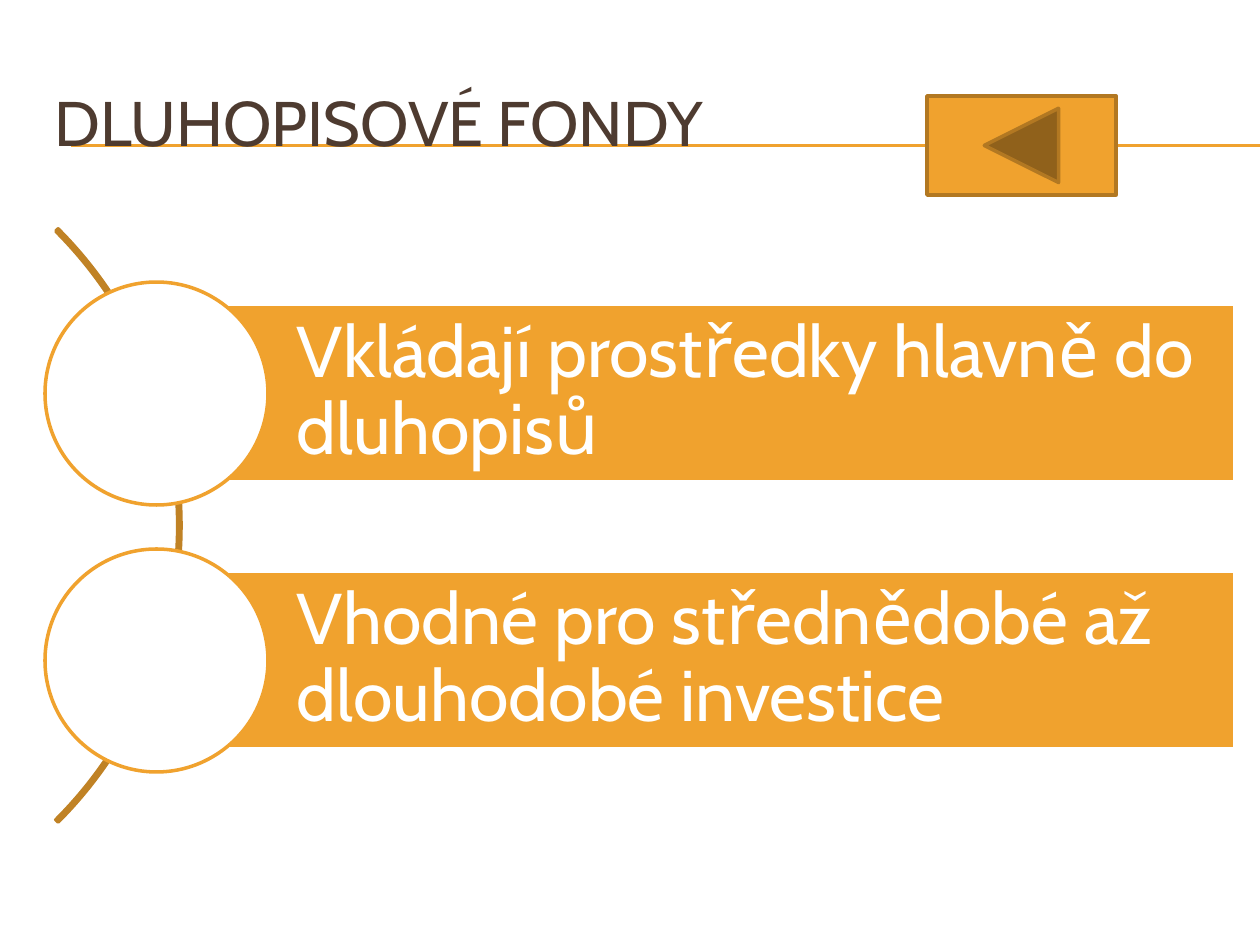
import dataclasses

import pptx
import pptx.dml.color
import pptx.enum.shapes
import pptx.enum.text
import pptx.oxml
import pptx.oxml.ns
import pptx.util

SHAPE = pptx.enum.shapes.MSO_SHAPE
ANCHOR = pptx.enum.text.MSO_ANCHOR
ALIGN = pptx.enum.text.PP_ALIGN
EMU_PER_PX = 914400 / 126


@dataclasses.dataclass(frozen=True)
class Theme:
    font: str = "Cabin"
    title_size: int = 36
    body_size: int = 41
    accent: str = "F0A22E"
    arc: str = "C08225"
    button_line: str = "B27822"
    title: str = "4E3B30"
    white: str = "FFFFFF"
    rule_width: float = 0.75
    outline_width: float = 2


@dataclasses.dataclass(frozen=True)
class Box:
    left: int
    top: int
    width: int
    height: int


@dataclasses.dataclass(frozen=True)
class Item:
    text: str
    center: int


THEME = Theme()
BAR_LEFT, BAR_WIDTH, BAR_HEIGHT = 156, 1079, 178
CIRCLE = 223
FIRST_CENTER, PITCH = 393, 267
TEXTS = (
    "Vkládají prostředky hlavně do dluhopisů",
    "Vhodné pro střednědobé až dlouhodobé investice",
)
ITEMS = [Item(text, FIRST_CENTER + index * PITCH) for index, text in enumerate(TEXTS)]


def px(length: int) -> pptx.util.Emu:
    return pptx.util.Emu(round(length * EMU_PER_PX))


def rgb(color: str) -> pptx.dml.color.RGBColor:
    return pptx.dml.color.RGBColor.from_string(color)


def apply_format(target, values: dict) -> None:
    for name, value in values.items():
        setattr(target, name, value)


def place(shape, box: Box) -> None:
    apply_format(shape, {name: px(value) for name, value in dataclasses.asdict(box).items()})


def write_text(shape, text: str, size: int, color: str, frame_format: dict, paragraph_format: dict) -> None:
    frame = shape.text_frame
    frame.text = text
    apply_format(frame, {"word_wrap": True, "vertical_anchor": ANCHOR.MIDDLE, **frame_format})
    paragraph = frame.paragraphs[0]
    apply_format(paragraph, {"alignment": ALIGN.LEFT, **paragraph_format})
    font = paragraph.runs[0].font
    apply_format(font, {"name": THEME.font, "size": pptx.util.Pt(size), "bold": False})
    font.color.rgb = rgb(color)


def add_shape(slide, kind, box: Box, fill: str, line: str):
    shape = slide.shapes.add_shape(kind, *map(px, dataclasses.astuple(box)))
    shape.shadow.inherit = False
    shape.fill.solid()
    shape.fill.fore_color.rgb = rgb(fill)
    shape.line.color.rgb = rgb(line)
    shape.line.width = pptx.util.Pt(THEME.outline_width)
    return shape


def add_rule(slide, top: int) -> None:
    connector = slide.shapes.add_connector(
        pptx.enum.shapes.MSO_CONNECTOR.STRAIGHT, px(71), px(top), px(1260), px(top)
    )
    connector.line.color.rgb = rgb(THEME.accent)
    connector.line.width = pptx.util.Pt(THEME.rule_width)
    properties = connector.element.find(pptx.oxml.ns.qn("p:spPr"))
    properties.append(pptx.oxml.parse_xml(f"<a:effectLst {pptx.oxml.ns.nsdecls('a')}/>"))


def add_title(slide) -> None:
    title = slide.shapes.title
    place(title, Box(42, 63, 1197, 116))
    write_text(title, "DLUHOPISOVÉ FONDY", THEME.title_size, THEME.title, {}, {})
    title.element.getparent().append(title.element)


def add_arc(slide) -> None:
    arc = add_shape(slide, SHAPE.BLOCK_ARC, Box(-658, 106, 839, 839), THEME.arc, THEME.arc)
    for index, value in enumerate((189, 27, 0.004)):
        arc.adjustments[index] = value
    arc.fill.background()


def add_item(slide, item: Item) -> None:
    bar_box = Box(BAR_LEFT, item.center - BAR_HEIGHT // 2, BAR_WIDTH, BAR_HEIGHT)
    bar = add_shape(slide, SHAPE.RECTANGLE, bar_box, THEME.accent, THEME.white)
    margins = {"margin_left": 141, "margin_top": 14, "margin_right": 14, "margin_bottom": 14}
    write_text(
        bar,
        item.text,
        THEME.body_size,
        THEME.white,
        {name: px(value) for name, value in margins.items()},
        {"line_spacing": 0.9},
    )
    circle_box = Box(BAR_LEFT - CIRCLE // 2, item.center - CIRCLE // 2, CIRCLE, CIRCLE)
    add_shape(slide, SHAPE.OVAL, circle_box, THEME.white, THEME.accent)


def main() -> None:
    presentation = pptx.Presentation()
    apply_format(presentation, {"slide_width": px(1260), "slide_height": px(945)})
    slide = presentation.slides.add_slide(presentation.slide_layouts[5])
    for top in (145, 146):
        add_rule(slide, top)
    add_title(slide)
    add_arc(slide)
    for item in ITEMS:
        add_item(slide, item)
    add_shape(
        slide, SHAPE.ACTION_BUTTON_BACK_OR_PREVIOUS, Box(927, 96, 189, 99), THEME.accent, THEME.button_line
    )
    presentation.save("out.pptx")


if __name__ == "__main__":
    main()
